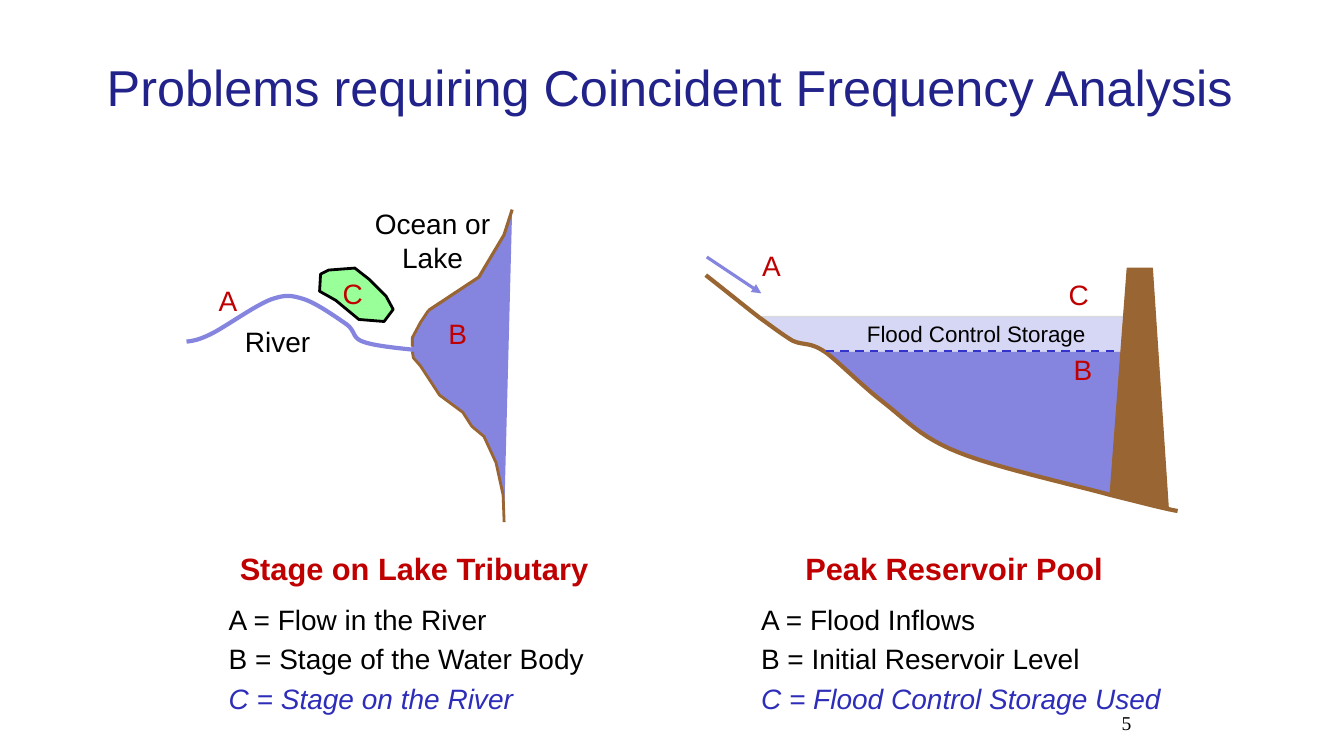
import pptx
import pptx.util
import pptx.dml.color
import pptx.enum.dml
import pptx.enum.shapes
import pptx.enum.text
import pptx.oxml
import pptx.oxml.ns

Inches = pptx.util.Inches
Pt = pptx.util.Pt
RGBColor = pptx.dml.color.RGBColor
ALIGN = pptx.enum.text.PP_ALIGN
ANCHOR = pptx.enum.text.MSO_ANCHOR

BLACK = RGBColor(0x00, 0x00, 0x00)
NAVY = RGBColor(0x22, 0x22, 0x8B)
RED = RGBColor(0xC0, 0x00, 0x00)
RESULT_BLUE = RGBColor(0x2D, 0x2D, 0xB9)
LEVEL_BLUE = RGBColor(0x33, 0x33, 0xCC)
WATER = RGBColor(0x85, 0x85, 0xE0)
FLOOD_POOL = RGBColor(0xD6, 0xD6, 0xF5)
POOL_EDGE = RGBColor(0xD9, 0xD9, 0xD9)
EARTH = RGBColor(0x99, 0x66, 0x33)
LAND_GREEN = RGBColor(0x99, 0xFF, 0x99)


def add_text(slide, box, lines, size, color=BLACK, bold=False, font="Arial",
             align=ALIGN.LEFT, anchor=ANCHOR.TOP, wrap=False, space=0):
    """Each line is a string, or a (string, color, italic) tuple."""
    shape = slide.shapes.add_textbox(*(Inches(value) for value in box))
    frame = shape.text_frame
    frame.word_wrap = wrap
    frame.vertical_anchor = anchor
    for index, line in enumerate(lines):
        text, line_color, italic = (line, color, False) if isinstance(line, str) else line
        paragraph = frame.paragraphs[0] if index == 0 else frame.add_paragraph()
        paragraph.alignment = align
        paragraph.space_before = Pt(space)
        run = paragraph.add_run()
        run.text = text
        run.font.name = font
        run.font.size = Pt(size)
        run.font.bold = bold
        run.font.italic = italic
        run.font.color.rgb = line_color


def add_outline(slide, origin, points, fill=None, line=None, width=1, close=False):
    """Draw a freeform whose points are inches from the origin."""
    left, top = origin
    corners = [(Inches(left + x), Inches(top + y)) for x, y in points]
    builder = slide.shapes.build_freeform(*corners[0], scale=1.0)
    builder.add_line_segments(corners[1:], close=close)
    shape = builder.convert_to_shape()
    shape.shadow.inherit = False
    if fill is None:
        shape.fill.background()
    else:
        shape.fill.solid()
        shape.fill.fore_color.rgb = fill
    if line is None:
        shape.line.fill.background()
    else:
        shape.line.color.rgb = line
        shape.line.width = Pt(width)


def curve(points, steps=12):
    """Sample joined cubic curves: a start, then two controls and an end each."""
    sampled = [points[0]]
    for first in range(0, len(points) - 1, 3):
        a, b, c, d = points[first:first + 4]
        for step in range(1, steps + 1):
            t = step / steps
            u = 1 - t
            sampled.append(tuple(
                u**3 * a[i] + 3 * u * u * t * b[i] + 3 * u * t * t * c[i] + t**3 * d[i]
                for i in (0, 1)))
    return sampled


def add_line(slide, origin, start, end, color, width):
    left, top = origin
    connector = slide.shapes.add_connector(
        pptx.enum.shapes.MSO_CONNECTOR.STRAIGHT,
        Inches(left + start[0]), Inches(top + start[1]),
        Inches(left + end[0]), Inches(top + end[1]))
    connector.line.color.rgb = color
    connector.line.width = Pt(width)
    connector._element.spPr.append(pptx.oxml.parse_xml(
        "<a:effectLst %s/>" % pptx.oxml.ns.nsdecls("a")))
    return connector


def add_letters(slide, origin, letters):
    left, top = origin
    for letter, x, y in letters:
        add_text(slide, (left + x, top + y, 0.5, 0.43), [letter], 20, RED, wrap=True)


def add_lake(slide, left, top):
    origin = (left, top)
    # Water body and river
    add_outline(slide, origin, [
        (4.08, 0.08), (4, 0.33), (3.75, 0.75), (3.5, 0.92), (3.25, 1.08), (3.17, 1.2),
        (3.09, 1.36), (3.08, 1.5), (3.25, 1.75), (3.37, 1.92), (3.58, 2.08), (3.68, 2.23),
        (3.79, 2.33), (3.92, 2.58), (4, 2.92), (4, 3.17)], fill=WATER)
    add_outline(slide, origin, curve([
        (3.1, 1.47), (2.91, 1.45), (2.71, 1.43), (2.6, 1.39), (2.49, 1.35), (2.53, 1.29),
        (2.44, 1.22), (2.34, 1.15), (2.14, 1.01), (2.02, 0.97), (1.89, 0.93), (1.84, 0.92),
        (1.69, 0.97), (1.53, 1.03), (1.24, 1.24), (1.1, 1.31), (0.96, 1.38), (0.91, 1.38),
        (0.85, 1.39)]), line=WATER, width=3)
    # Land beside the river
    add_outline(slide, origin, [
        (2.56, 1.17), (2.33, 0.98), (2.17, 0.89), (2.18, 0.72), (2.26, 0.68), (2.52, 0.66),
        (2.66, 0.77), (2.83, 0.94), (2.9, 1.07), (2.81, 1.19)],
        fill=LAND_GREEN, line=BLACK, width=2, close=True)
    # Shore, in three stretches
    shores = [
        (2.25, [(4.08, 0.08), (4, 0.33), (3.75, 0.75), (3.25, 1.08)]),
        (2, [(3.25, 1.08), (3.17, 1.2), (3.09, 1.35), (3.09, 1.44)]),
        (2, [(3.09, 1.49), (3.1, 1.55), (3.17, 1.63), (3.36, 1.92), (3.59, 2.09),
             (3.68, 2.23), (3.8, 2.33), (3.92, 2.59), (3.99, 2.91), (4, 3.18)])]
    for width, points in shores:
        add_outline(slide, origin, points, line=EARTH, width=width)
    # Labels
    add_text(slide, (left + 1.33, top + 1.17, 0.85, 0.43), ["River"], 20)
    add_text(slide, (left + 2.58, top, 1.42, 0.77), ["Ocean or", "Lake"], 20,
             align=ALIGN.CENTER)
    add_letters(slide, origin, [("A", 1.07, 0.76), ("B", 3.35, 1.09), ("C", 2.3, 0.69)])


def add_reservoir(slide, left, top):
    origin = (left, top)
    # Flood pool above the initial pool
    add_outline(slide, origin, [
        (1.08, 1.43), (0.86, 1.38), (0.56, 1.14), (4.28, 1.14), (4.26, 1.57), (1.29, 1.57)],
        fill=FLOOD_POOL, line=POOL_EDGE, width=0.75)
    add_outline(slide, origin, [
        (4.26, 2.96), (4.26, 1.49), (1.18, 1.49), (1.4, 1.67), (1.76, 1.99), (2.01, 2.2),
        (2.28, 2.38), (2.63, 2.54), (3.45, 2.77)], fill=WATER, close=True)
    # Valley floor and dam
    add_outline(slide, origin, curve([
        (0, 0.73), (0.09, 0.8), (0.39, 1.04), (0.53, 1.15), (0.67, 1.25), (0.76, 1.32),
        (0.86, 1.38), (0.97, 1.43), (1.03, 1.39), (1.18, 1.49), (1.32, 1.59), (1.54, 1.82),
        (1.76, 1.99), (1.98, 2.16), (2.13, 2.34), (2.51, 2.49), (2.88, 2.64), (3.65, 2.81),
        (4.01, 2.91), (4.37, 3), (4.52, 3.04), (4.68, 3.07)]), line=EARTH, width=3)
    add_outline(slide, origin, [(4.01, 2.9), (4.18, 0.66), (4.43, 0.66), (4.59, 3.07)],
                fill=EARTH, line=EARTH, width=0.75)
    # Initial level and inflow arrow
    level = add_line(slide, origin, (1.19, 1.48), (4.1, 1.48), LEVEL_BLUE, 1.5)
    level.line.dash_style = pptx.enum.dml.MSO_LINE.DASH
    inflow = add_line(slide, origin, (0.01, 0.55), (0.55, 0.91), WATER, 2.25)
    inflow.line._get_or_add_ln().append(pptx.oxml.parse_xml(
        '<a:tailEnd type="triangle" %s/>' % pptx.oxml.ns.nsdecls("a")))
    # Labels
    add_text(slide, (left + 1.5, top + 1.13, 2.37, 0.37), ["Flood Control Storage"], 16)
    add_letters(slide, origin, [("A", 0.46, 0.42), ("B", 3.55, 1.45), ("C", 3.5, 0.7)])


def add_legend(slide, box, heading, heading_offset, causes, result):
    left, top, width, height = box
    add_text(slide, (left + heading_offset, top, width, 0.47), [heading], 22, RED,
             bold=True, wrap=True)
    add_text(slide, (left, top + 0.53, width, height - 0.53),
             causes + [(result, RESULT_BLUE, True)], 20, wrap=True, space=4)


def main():
    presentation = pptx.Presentation()
    presentation.slide_width = Inches(13.33)
    presentation.slide_height = Inches(7.5)
    slide = presentation.slides.add_slide(presentation.slide_layouts[6])

    add_lake(slide, 1, 2)
    add_reservoir(slide, 7, 2)
    add_legend(slide, (2.17, 5.4, 4.2, 1.73), "Stage on Lake Tributary", 0.11,
               ["A = Flow in the River", "B = Stage of the Water Body"],
               "C = Stage on the River")
    add_legend(slide, (7.45, 5.4, 4.3, 1.73), "Peak Reservoir Pool", 0.44,
               ["A = Flood Inflows", "B = Initial Reservoir Level"],
               "C = Flood Control Storage Used")

    # Slide number and title
    add_text(slide, (9.24, 7, 2.08, 0.5), ["5"], 14, font="Times New Roman",
             align=ALIGN.RIGHT, wrap=True)
    add_text(slide, (0.96, 0.23, 11.88, 1.25),
             ["Problems requiring Coincident Frequency Analysis"], 36, NAVY,
             anchor=ANCHOR.MIDDLE, wrap=True)
    presentation.save("out.pptx")


if __name__ == "__main__":
    main()
